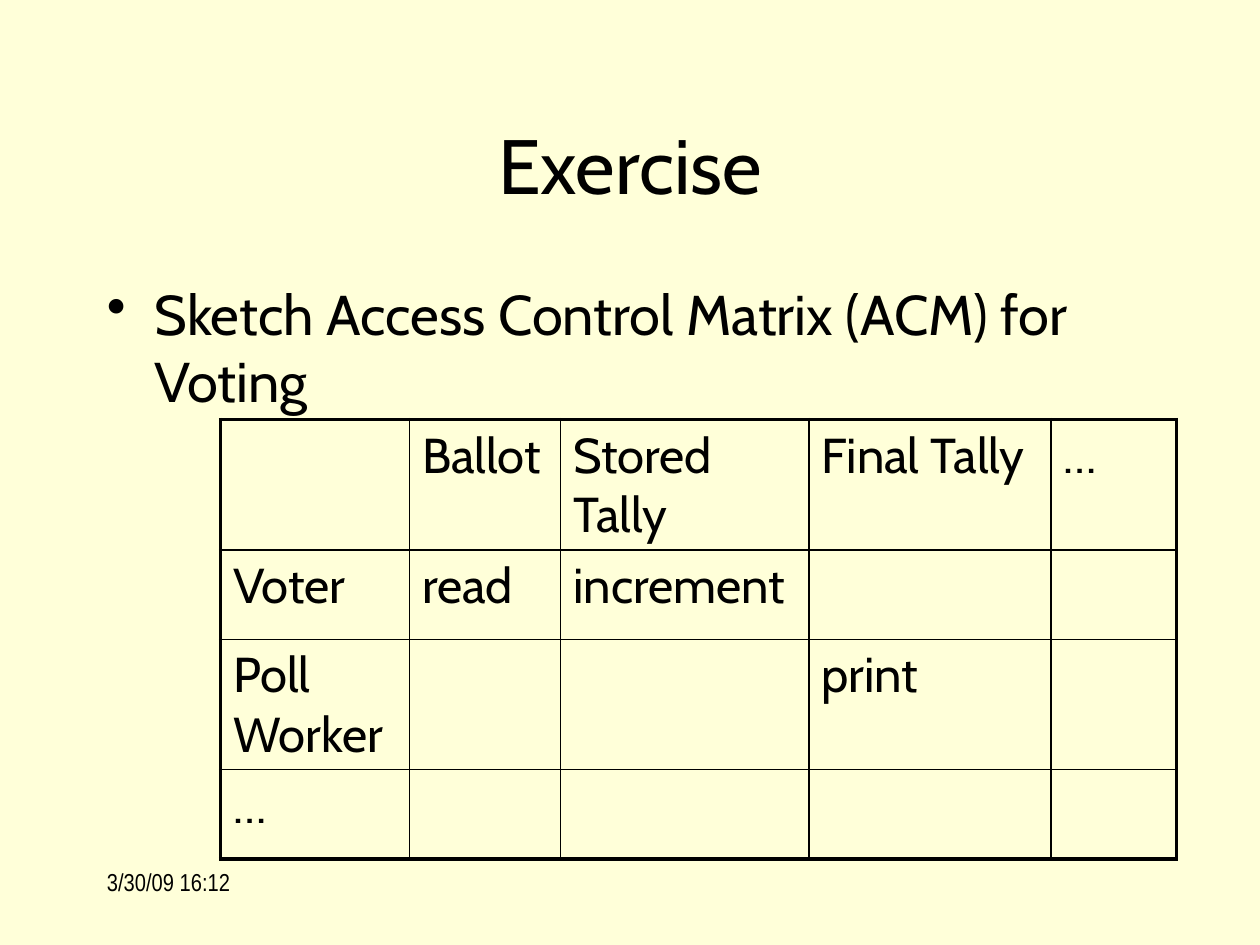
from dataclasses import dataclass

from lxml.etree import SubElement
from pptx import Presentation
from pptx.dml.color import RGBColor
from pptx.enum.text import MSO_ANCHOR as Anchor, PP_ALIGN as Align
from pptx.oxml.ns import qn
from pptx.util import Inches, Pt


@dataclass(frozen=True)
class Theme:
    background: RGBColor = RGBColor(0xFF, 0xFF, 0xD9)
    ink: RGBColor = RGBColor(0, 0, 0)
    font: str = "Cabin"
    date_font: str = "Arial Narrow"
    title_size: float = 44
    body_size: float = 32
    table_size: float = 28
    date_size: float = 14
    outer_border: float = 2.25
    inner_border: float = 1


@dataclass(frozen=True)
class TextBlock:
    text: str
    left: float
    top: float
    width: float
    height: float
    size: float
    font: str
    align: Align = Align.LEFT
    anchor: Anchor = Anchor.TOP
    bulleted: bool = False


THEME = Theme()

TEXT_BLOCKS = [
    TextBlock("3/30/09 16:12", 0.75, 6.83, 2.08, 0.5, THEME.date_size, THEME.date_font),
    TextBlock("Exercise", 0.75, 0.67, 8.5, 1.25, THEME.title_size, THEME.font,
              align=Align.CENTER, anchor=Anchor.MIDDLE),
    TextBlock("Sketch Access Control Matrix (ACM) for Voting", 0.75, 2.17, 8.5, 4.5,
              THEME.body_size, THEME.font, bulleted=True),
]

MATRIX = [
    ["", "Ballot", "Stored Tally", "Final Tally", "…"],
    ["Voter", "read", "increment", "", ""],
    ["Poll Worker", "", "", "print", ""],
    ["…", "", "", "", ""],
]
MATRIX_LEFT, MATRIX_TOP = 1.75, 3.33
COLUMN_WIDTHS = [1.5, 1.2, 1.97, 1.92, 1]
ROW_HEIGHTS = [1.03, 0.71, 1.03, 0.71]


def style_text(paragraph, size: float, font: str) -> None:
    for run in paragraph.runs:
        run.font.size = Pt(size)
        run.font.name = font
        run.font.color.rgb = THEME.ink


def space_before(paragraph, percent: int) -> None:
    spacing = SubElement(paragraph._p.get_or_add_pPr(), qn("a:spcBef"))
    SubElement(spacing, qn("a:spcPct"), val=str(percent * 1000))


def add_bullet(paragraph) -> None:
    properties = paragraph._p.get_or_add_pPr()
    properties.set("marL", str(Inches(0.38)))
    properties.set("indent", str(Inches(-0.38)))
    SubElement(properties, qn("a:buChar"), char="•")


def add_text(slide, block: TextBlock) -> None:
    shape = slide.shapes.add_textbox(Inches(block.left), Inches(block.top),
                                     Inches(block.width), Inches(block.height))
    text_frame = shape.text_frame
    text_frame.word_wrap = True
    text_frame.vertical_anchor = block.anchor
    text_frame.text = block.text
    paragraph = text_frame.paragraphs[0]
    paragraph.alignment = block.align
    style_text(paragraph, block.size, block.font)
    if block.bulleted:
        space_before(paragraph, 20)
        add_bullet(paragraph)


def set_borders(cell, outer_sides: dict[str, bool]) -> None:
    properties = cell._tc.get_or_add_tcPr()
    for position, (side, is_outer) in enumerate(outer_sides.items()):
        width = THEME.outer_border if is_outer else THEME.inner_border
        line = properties.makeelement(qn(f"a:{side}"), {"w": str(Pt(width))})
        fill = SubElement(line, qn("a:solidFill"))
        SubElement(fill, qn("a:srgbClr"), val=str(THEME.ink))
        properties.insert(position, line)  # borders precede the cell fill


def add_matrix(slide) -> None:
    last_row, last_column = len(ROW_HEIGHTS) - 1, len(COLUMN_WIDTHS) - 1
    table = slide.shapes.add_table(
        len(ROW_HEIGHTS), len(COLUMN_WIDTHS), Inches(MATRIX_LEFT), Inches(MATRIX_TOP),
        Inches(sum(COLUMN_WIDTHS)), Inches(sum(ROW_HEIGHTS))).table
    table.first_row = table.horz_banding = False
    for column, width in zip(table.columns, COLUMN_WIDTHS):
        column.width = Inches(width)
    for row, height in zip(table.rows, ROW_HEIGHTS):
        row.height = Inches(height)

    for row_index, labels in enumerate(MATRIX):
        for column_index, label in enumerate(labels):
            cell = table.cell(row_index, column_index)
            cell.fill.background()
            set_borders(cell, {"lnL": column_index == 0, "lnR": column_index == last_column,
                               "lnT": row_index == 0, "lnB": row_index == last_row})
            if label:
                cell.text_frame.text = label
                paragraph = cell.text_frame.paragraphs[0]
                space_before(paragraph, 20)
                style_text(paragraph, THEME.table_size, THEME.font)


def main() -> None:
    presentation = Presentation()
    presentation.slide_width, presentation.slide_height = Inches(10), Inches(7.5)
    slide = presentation.slides.add_slide(presentation.slide_layouts[6])
    slide.background.fill.solid()
    slide.background.fill.fore_color.rgb = THEME.background

    # Date, title and task
    for block in TEXT_BLOCKS:
        add_text(slide, block)

    # Access control matrix
    add_matrix(slide)
    presentation.save("out.pptx")


if __name__ == "__main__":
    main()
